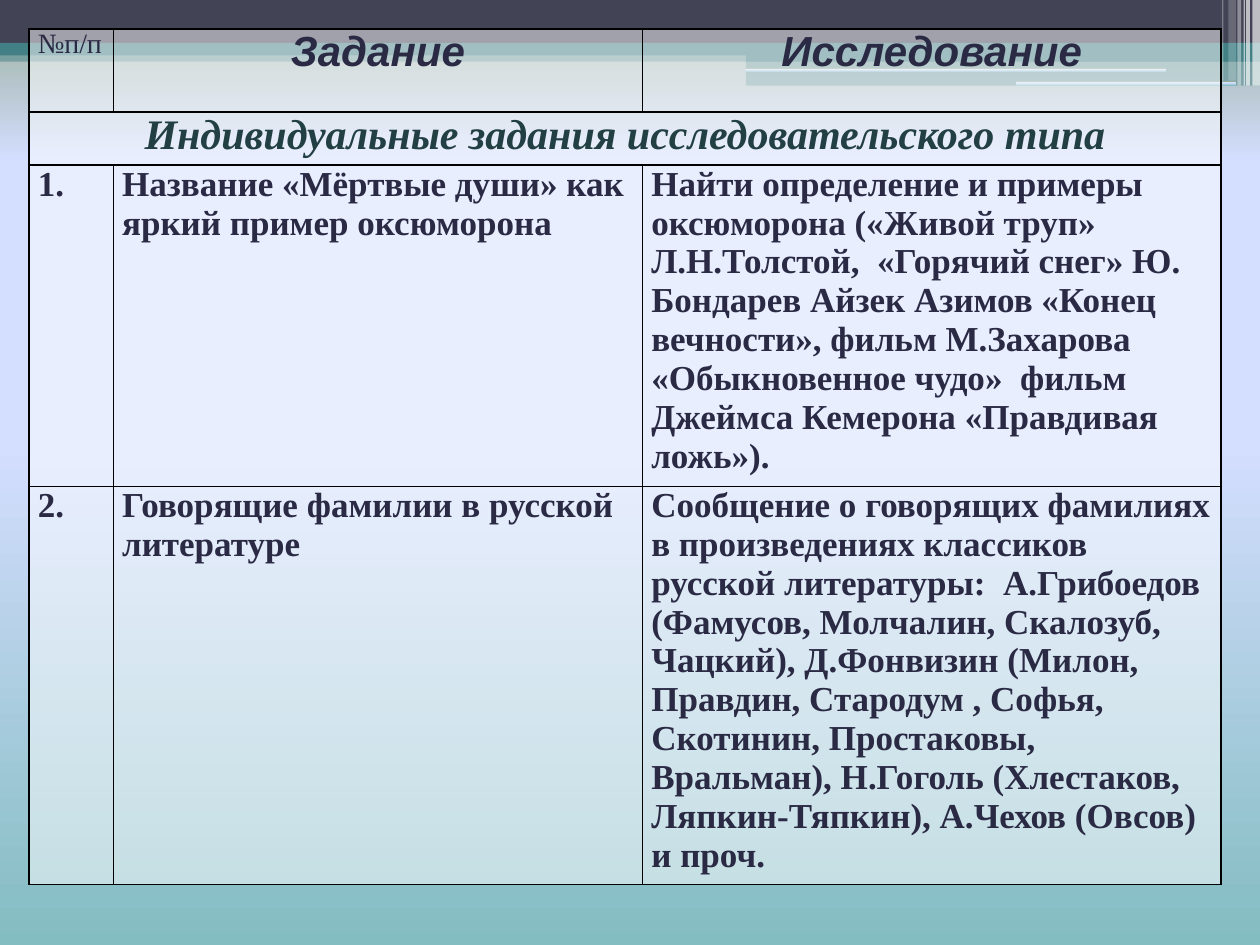
from lxml import etree
from pptx import Presentation
from pptx.dml.color import RGBColor
from pptx.enum.shapes import MSO_SHAPE
from pptx.enum.text import PP_ALIGN
from pptx.oxml.ns import qn
from pptx.util import Inches, Pt

RECTANGLE = MSO_SHAPE.RECTANGLE
ROUNDED = MSO_SHAPE.ROUNDED_RECTANGLE
LEFT = PP_ALIGN.LEFT
CENTER = PP_ALIGN.CENTER

THEME = {
    "dark": "424456",
    "teal": "438086",
    "white": "FFFFFF",
    "text": "2A2A45",
    "section": "224043",
    "border": "000000",
    "gradient": [(0, "83BCC1"), (53, "D4DEFF"), (83, "D4DEFF"), (100, "96AB94")],
    "serif": "Times New Roman",
    "sans": "Arial",
    "number_size": 16,
    "heading_size": 24,
    "body_size": 20,
}

HEADINGS = ["№п/п", "Задание", "Исследование"]
SECTION = "Индивидуальные задания исследовательского типа"
TASKS = [
    (
        "1.",
        "Название «Мёртвые души» как яркий пример оксюморона",
        "Найти определение и примеры оксюморона («Живой труп» Л.Н.Толстой,  "
        "«Горячий снег» Ю. Бондарев Айзек Азимов «Конец вечности», фильм "
        "М.Захарова «Обыкновенное чудо»  фильм  Джеймса Кемерона «Правдивая ложь»).",
    ),
    (
        "2.",
        "Говорящие фамилии в русской литературе",
        "Сообщение о говорящих фамилиях в произведениях классиков русской "
        "литературы:  А.Грибоедов (Фамусов, Молчалин, Скалозуб, Чацкий), "
        "Д.Фонвизин (Милон, Правдин, Стародум , Софья, Скотинин, Простаковы,  "
        "Вральман), Н.Гоголь (Хлестаков, Ляпкин-Тяпкин), А.Чехов (Овсов) и проч.",
    ),
]

TABLE_LEFT, TABLE_TOP = 0.23, 0.23
COLUMN_WIDTHS = [0.67, 4.2, 4.59]
ROW_HEIGHTS = [0.66, 0.42, 2.55, 3.16]
CELL_INSET = 0.07

BANDS = [
    (0, 0.4, 10, 0.09, "teal", 50),
    (0, 0, 10, 0.34, "dark", 100),
    (0, 0.34, 10, 0.1, "teal", 100),
    (5.92, 0.39, 4.08, 0.1, "teal", 100),
    (5.92, 0.48, 4.08, 0.2, "teal", 50),
]
GRADIENT_BARS = [(5.91, 0.54, 3.35, 0.03), (8.06, 0.64, 1.75, 0.04)]
STRIPES = [
    (9.94, 0.06, 0.68, 65),
    (9.89, 0.03, 0.68, 65),
    (9.87, 0.01, 0.68, 60),
    (9.82, 0.03, 0.68, 40),
    (9.75, 0.06, 0.64, 20),
    (9.7, 0.01, 0.64, 30),
]


def set_solid(fill, parent, color, opacity=100):
    fill.solid()
    fill.fore_color.rgb = RGBColor.from_string(color)
    if opacity < 100:
        color_element = parent.find(qn("a:solidFill")).find(qn("a:srgbClr"))
        etree.SubElement(color_element, qn("a:alpha"), val=str(opacity * 1000))


def set_gradient(fill, parent):
    fill.gradient()
    fill.gradient_angle = 90
    stops = next(parent.iter(qn("a:gsLst")))
    for stop in list(stops):
        stops.remove(stop)
    for position, color in THEME["gradient"]:
        stop = etree.SubElement(stops, qn("a:gs"), pos=str(position * 1000))
        etree.SubElement(stop, qn("a:srgbClr"), val=color)


def add_block(slide, left, top, width, height, kind=RECTANGLE):
    shape = slide.shapes.add_shape(
        kind, Inches(left), Inches(top), Inches(width), Inches(height)
    )
    shape.shadow.inherit = False
    shape.line.fill.background()
    return shape


def set_borders(cell):
    properties = cell._tc.get_or_add_tcPr()
    for index, side in enumerate(("a:lnL", "a:lnR", "a:lnT", "a:lnB")):
        line = etree.Element(qn(side), w=str(Pt(1)))
        fill = etree.SubElement(line, qn("a:solidFill"))
        etree.SubElement(fill, qn("a:srgbClr"), val=THEME["border"])
        properties.insert(index, line)


def write_cell(cell, text, size, font="serif", color="text", align=LEFT,
               bold=True, italic=False):
    paragraph = cell.text_frame.paragraphs[0]
    paragraph.alignment = align
    run = paragraph.add_run()
    run.text = text
    run.font.name = THEME[font]
    run.font.size = Pt(THEME[size])
    run.font.bold = bold
    run.font.italic = italic
    run.font.color.rgb = RGBColor.from_string(THEME[color])


def add_decoration(slide):
    stripes = [(left, 0, width, height, "white", opacity)
               for left, width, height, opacity in STRIPES]
    for *box, color, opacity in BANDS:
        shape = add_block(slide, *box)
        set_solid(shape.fill, shape.element.spPr, THEME[color], opacity)
    for box in GRADIENT_BARS:
        shape = add_block(slide, *box, kind=ROUNDED)
        set_gradient(shape.fill, shape.element.spPr)
    for *box, color, opacity in stripes:
        shape = add_block(slide, *box)
        set_solid(shape.fill, shape.element.spPr, THEME[color], opacity)


def add_task_table(slide):
    table = slide.shapes.add_table(
        len(ROW_HEIGHTS), len(COLUMN_WIDTHS), Inches(TABLE_LEFT), Inches(TABLE_TOP),
        Inches(sum(COLUMN_WIDTHS)), Inches(sum(ROW_HEIGHTS)),
    ).table
    table.first_row = False
    table.horz_banding = False
    for column, width in zip(table.columns, COLUMN_WIDTHS):
        column.width = Inches(width)
    for row, height in zip(table.rows, ROW_HEIGHTS):
        row.height = Inches(height)
    for cell in table.iter_cells():
        cell.margin_left = cell.margin_right = Inches(CELL_INSET)
        cell.margin_top = cell.margin_bottom = 0
        set_solid(cell.fill, cell._tc.get_or_add_tcPr(), THEME["white"], 50)
        set_borders(cell)

    write_cell(table.cell(0, 0), HEADINGS[0], "number_size", bold=False)
    for column, heading in enumerate(HEADINGS[1:], start=1):
        write_cell(table.cell(0, column), heading, "heading_size", font="sans",
                   align=CENTER, italic=True)
    table.cell(1, 0).merge(table.cell(1, len(COLUMN_WIDTHS) - 1))
    write_cell(table.cell(1, 0), SECTION, "heading_size", color="section",
               align=CENTER, italic=True)
    for row, task in enumerate(TASKS, start=2):
        for column, text in enumerate(task):
            write_cell(table.cell(row, column), text, "body_size")


def main():
    presentation = Presentation()
    presentation.slide_width = Inches(10)
    presentation.slide_height = Inches(7.5)
    slide = presentation.slides.add_slide(presentation.slide_layouts[6])
    set_gradient(slide.background.fill, slide.element)
    add_decoration(slide)
    add_task_table(slide)
    presentation.save("out.pptx")


if __name__ == "__main__":
    main()
